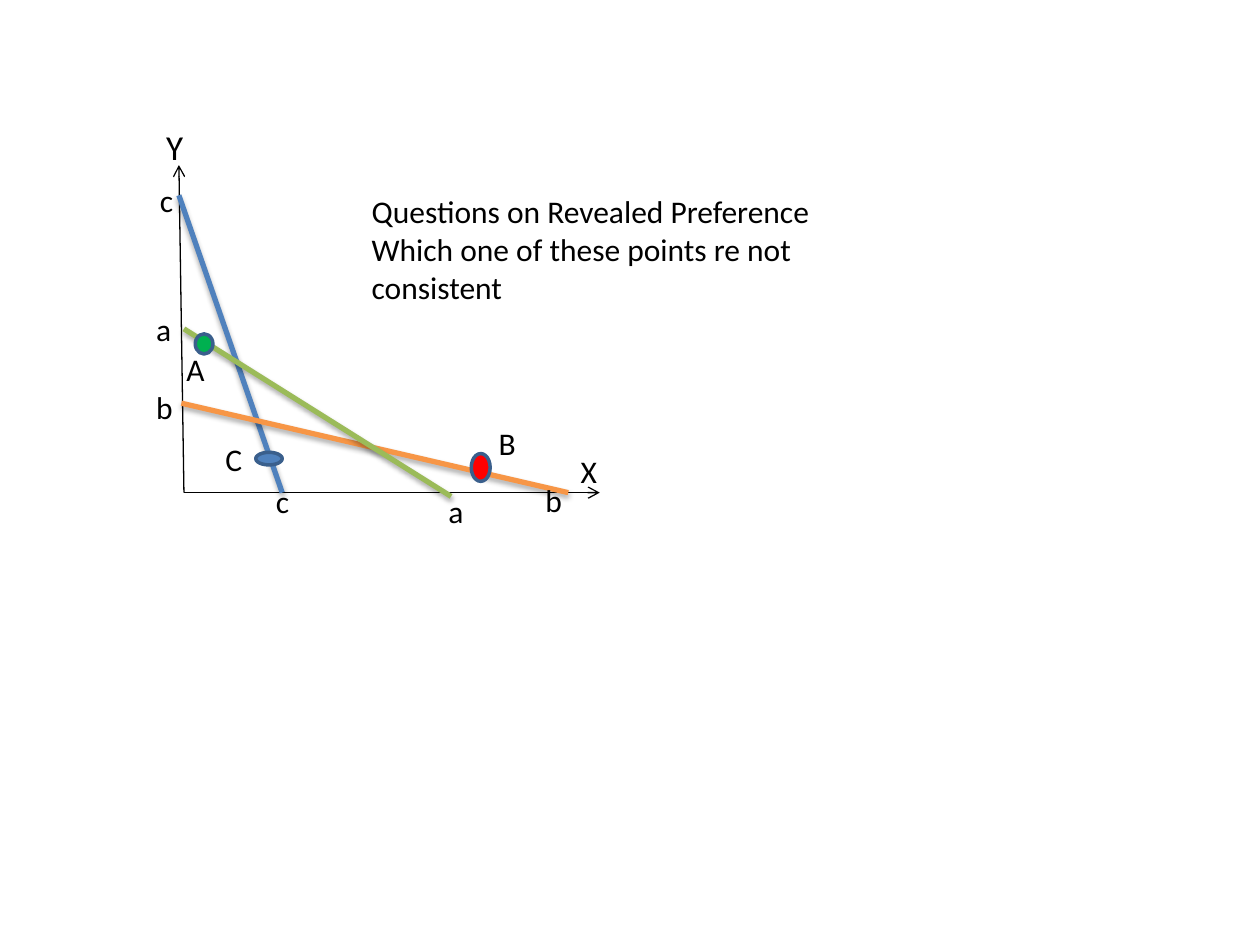
from dataclasses import dataclass

from lxml.etree import SubElement
from pptx import Presentation
from pptx.dml.color import RGBColor
from pptx.enum.shapes import MSO_CONNECTOR, MSO_SHAPE
from pptx.enum.text import MSO_ANCHOR, MSO_AUTO_SIZE, PP_ALIGN
from pptx.oxml.ns import qn
from pptx.shapes.connector import Connector
from pptx.slide import Slide
from pptx.util import Inches, Pt

FONT = "Calibri"
COLORS = {
    "black": "000000",
    "blue": "4F81BD",
    "orange": "F79646",
    "lime": "9BBB59",
    "red": "FF0000",
    "green": "00B050",
    "outline": "3A5F8C",
}


@dataclass
class Segment:
    start: tuple[float, float]
    end: tuple[float, float]
    color: str


@dataclass
class Point:
    left: float
    top: float
    width: float
    height: float
    color: str


@dataclass
class Label:
    text: str
    left: float
    top: float
    width: float
    height: float = 0.4
    size: int = 18


ORIGIN = (1.46, 3.91)
AXES = [
    Segment(ORIGIN, (1.42, 1.31), "black"),
    Segment(ORIGIN, (4.76, 3.91), "black"),
]
BUDGET_LINES = [
    Segment((1.42, 1.55), (2.24, 3.91), "blue"),
    Segment((1.44, 3.2), (4.51, 3.91), "orange"),
    Segment((1.46, 2.61), (3.58, 3.94), "lime"),
]
CHOICES = [
    Point(2.03, 3.59, 0.21, 0.1, "blue"),
    Point(3.74, 3.6, 0.15, 0.22, "red"),
    Point(1.55, 2.65, 0.14, 0.16, "green"),
]
LABELS = [
    Label("Y", 1.22, 0.95, 0.55, 0.44, 20),
    Label("X", 4.51, 3.54, 0.51),
    Label("C", 1.69, 3.44, 0.47),
    Label("B", 3.86, 3.32, 0.37),
    Label("A", 1.38, 2.73, 0.55),
    Label("a", 1.14, 2.41, 0.3),
    Label("a", 3.46, 3.86, 0.24),
    Label("b", 1.14, 3.03, 0.47),
    Label("b", 4.23, 3.77, 0.55),
    Label("c", 1.17, 1.39, 0.47),
    Label("c", 2.09, 3.78, 0.79),
]
TITLE_LINES = [
    "Questions on Revealed Preference",
    "Which one of these points re not consistent",
]


def rgb(name: str) -> RGBColor:
    return RGBColor.from_string(COLORS[name])


def add_span(para, text: str, size: int) -> None:
    span = para.add_run()
    span.text = text
    span.font.name = FONT
    span.font.size = Pt(size)
    span.font.color.rgb = rgb("black")


def add_title(page: Slide) -> None:
    title = page.shapes.title
    title.left, title.top = Inches(2.85), Inches(1.62)
    title.width, title.height = Inches(4.33), Inches(0.71)
    frame = title.text_frame
    frame.auto_size = MSO_AUTO_SIZE.NONE
    frame.vertical_anchor = MSO_ANCHOR.MIDDLE
    para = frame.paragraphs[0]
    para.alignment = PP_ALIGN.LEFT
    for index, text in enumerate(TITLE_LINES):
        if index:
            para.add_line_break()
        add_span(para, text, 18)


def add_segment(page: Slide, segment: Segment, width: float) -> Connector:
    """Draw a straight line with an empty effect list."""
    ends = [Inches(value) for value in segment.start + segment.end]
    line = page.shapes.add_connector(MSO_CONNECTOR.STRAIGHT, *ends)
    line.line.color.rgb = rgb(segment.color)
    line.line.width = Pt(width)
    SubElement(line._element.spPr, qn("a:effectLst"))
    return line


def add_axis(page: Slide, segment: Segment) -> None:
    axis = add_segment(page, segment, 0.75)
    SubElement(axis.line._get_or_add_ln(), qn("a:tailEnd"), type="arrow")


def add_budget_line(page: Slide, segment: Segment) -> None:
    line = add_segment(page, segment, 3)
    effects = line._element.spPr.find(qn("a:effectLst"))
    shadow = SubElement(
        effects, qn("a:outerShdw"), blurRad=str(Pt(3.1)), dist=str(Pt(1.8)),
        dir="5400000", rotWithShape="0",
    )
    color = SubElement(shadow, qn("a:srgbClr"), val=COLORS["black"])
    SubElement(color, qn("a:alpha"), val="35000")


def add_point(page: Slide, point: Point) -> None:
    dot = page.shapes.add_shape(
        MSO_SHAPE.OVAL, Inches(point.left), Inches(point.top),
        Inches(point.width), Inches(point.height),
    )
    dot.shadow.inherit = False
    dot.fill.solid()
    dot.fill.fore_color.rgb = rgb(point.color)
    dot.line.color.rgb = rgb("outline")
    dot.line.width = Pt(2)


def add_label(page: Slide, label: Label) -> None:
    box = page.shapes.add_textbox(
        Inches(label.left), Inches(label.top),
        Inches(label.width), Inches(label.height),
    )
    frame = box.text_frame
    frame.word_wrap = True
    frame.auto_size = MSO_AUTO_SIZE.SHAPE_TO_FIT_TEXT
    add_span(frame.paragraphs[0], label.text, label.size)


def main() -> None:
    deck = Presentation()
    deck.slide_width, deck.slide_height = Inches(10), Inches(7.5)
    page = deck.slides.add_slide(deck.slide_layouts[0])
    subtitle = page.placeholders[1]._element
    subtitle.getparent().remove(subtitle)

    add_title(page)
    for axis in AXES:
        add_axis(page, axis)
    for line in BUDGET_LINES:
        add_budget_line(page, line)
    for point in CHOICES:
        add_point(page, point)
    for label in LABELS:
        add_label(page, label)
    deck.save("out.pptx")


if __name__ == "__main__":
    main()
